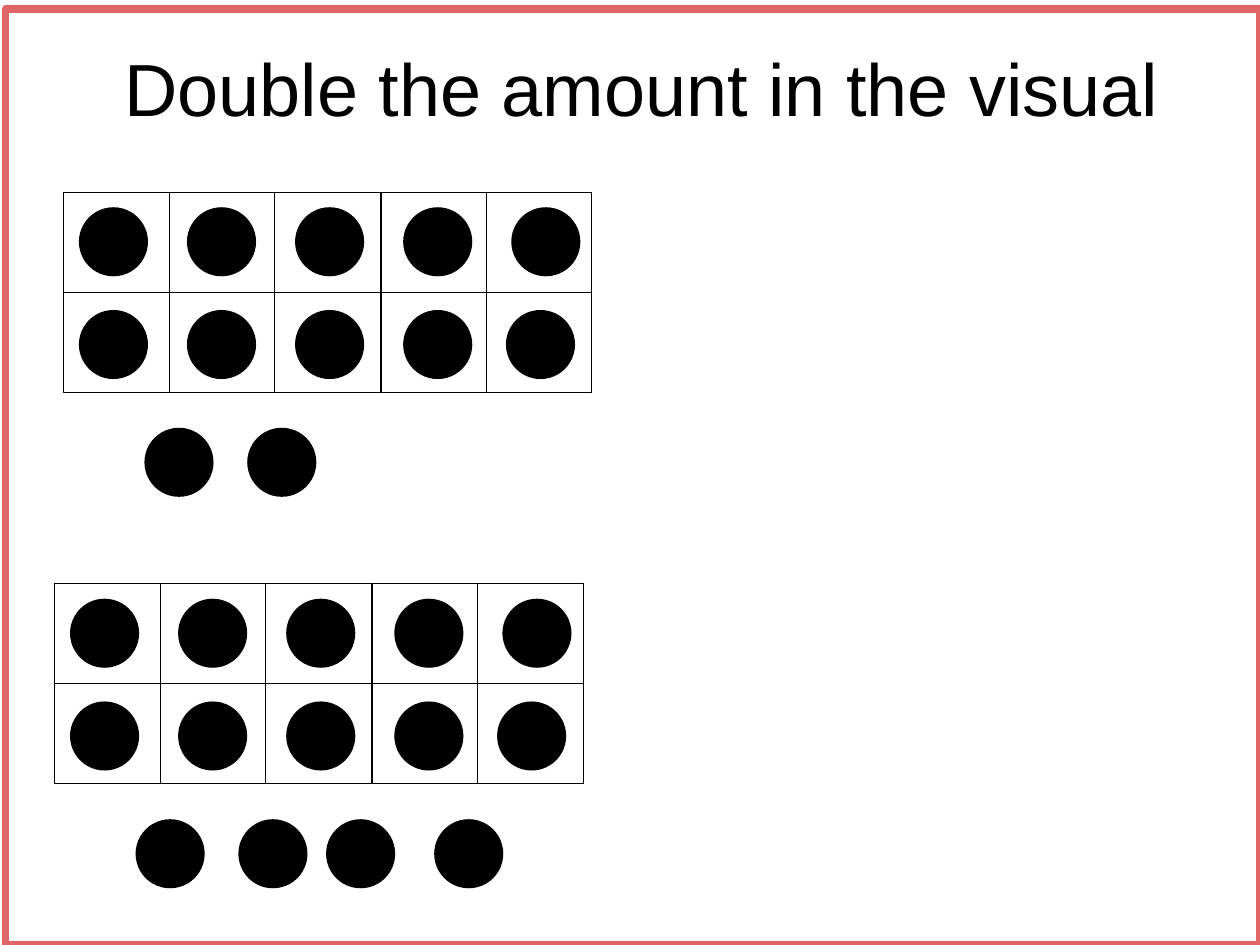
from itertools import product

from pptx import Presentation
from pptx.dml.color import RGBColor
from pptx.enum.shapes import MSO_SHAPE
from pptx.enum.text import MSO_ANCHOR, MSO_AUTO_SIZE, PP_ALIGN
from pptx.util import Emu, Pt

BLACK = RGBColor(0x00, 0x00, 0x00)
WHITE = RGBColor(0xFF, 0xFF, 0xFF)
CORAL = RGBColor(0xE0, 0x66, 0x66)

EMU_PER_PX = 9144  # 100 px to the inch
COLS, ROWS = 5, 2
FRAME_W, CELL_W, CELL_H = 597, 119, 113
DOT = 78
DOT_INSET, DOT_STEP_X, DOT_STEP_Y = 17, 122, 116
LAST_DOT_SHIFT = 6
EXTRA_TOP = 266


def px(n):
    return Emu(n * EMU_PER_PX)


def add_shape(shapes, kind, x, y, w, h, fill=None, line=None, line_pt=0.75):
    s = shapes.add_shape(kind, px(x), px(y), px(w), px(h))
    s.shadow.inherit = False
    if fill is None:
        s.fill.background()
    else:
        s.fill.solid()
        s.fill.fore_color.rgb = fill
    if line is None:
        s.line.fill.background()
    else:
        s.line.color.rgb = line
        s.line.width = Pt(line_pt)


def add_dot(shapes, x, y):
    add_shape(shapes, MSO_SHAPE.OVAL, x, y, DOT, DOT, fill=BLACK)


def add_ten_frame(slide, left, top, extra_xs):
    """Group a full ten frame with the loose dots below it."""
    shapes = slide.shapes.add_group_shape().shapes
    cells = list(product(range(ROWS), range(COLS)))
    for row, col in cells:
        add_shape(shapes, MSO_SHAPE.RECTANGLE,
                  left + FRAME_W * col // COLS, top + CELL_H * row,
                  CELL_W, CELL_H, fill=WHITE, line=BLACK)
    for row, col in cells:
        shift = LAST_DOT_SHIFT if (row, col) == cells[-1] else 0
        add_dot(shapes, left + DOT_INSET + DOT_STEP_X * col - shift,
                top + DOT_INSET + DOT_STEP_Y * row)
    for x in extra_xs:
        add_dot(shapes, left + x, top + EXTRA_TOP)


def set_title(slide, text):
    s = slide.shapes.title
    s.left, s.top, s.width, s.height = px(62), px(29), px(1324), px(188)
    tf = s.text_frame
    tf.text = text
    tf.word_wrap = True
    tf.auto_size = MSO_AUTO_SIZE.NONE
    tf.vertical_anchor = MSO_ANCHOR.TOP
    tf.margin_left = tf.margin_right = tf.margin_bottom = px(10)
    tf.margin_top = px(19)
    p = tf.paragraphs[0]
    p.alignment = PP_ALIGN.CENTER
    p.font.name = "Arial"
    p.font.size = Pt(60)
    p.font.color.rgb = BLACK


def main():
    prs = Presentation()
    prs.slide_width, prs.slide_height = px(1422), px(1067)
    slide = prs.slides.add_slide(prs.slide_layouts[5])
    set_title(slide, "Double the amount in the visual")
    add_shape(slide.shapes, MSO_SHAPE.RECTANGLE, 6, 10, 1416, 1057,
              line=CORAL, line_pt=6)
    add_ten_frame(slide, 72, 217, [91, 207])
    add_ten_frame(slide, 62, 659, [91, 207, 306, 428])
    prs.save("out.pptx")


if __name__ == "__main__":
    main()
